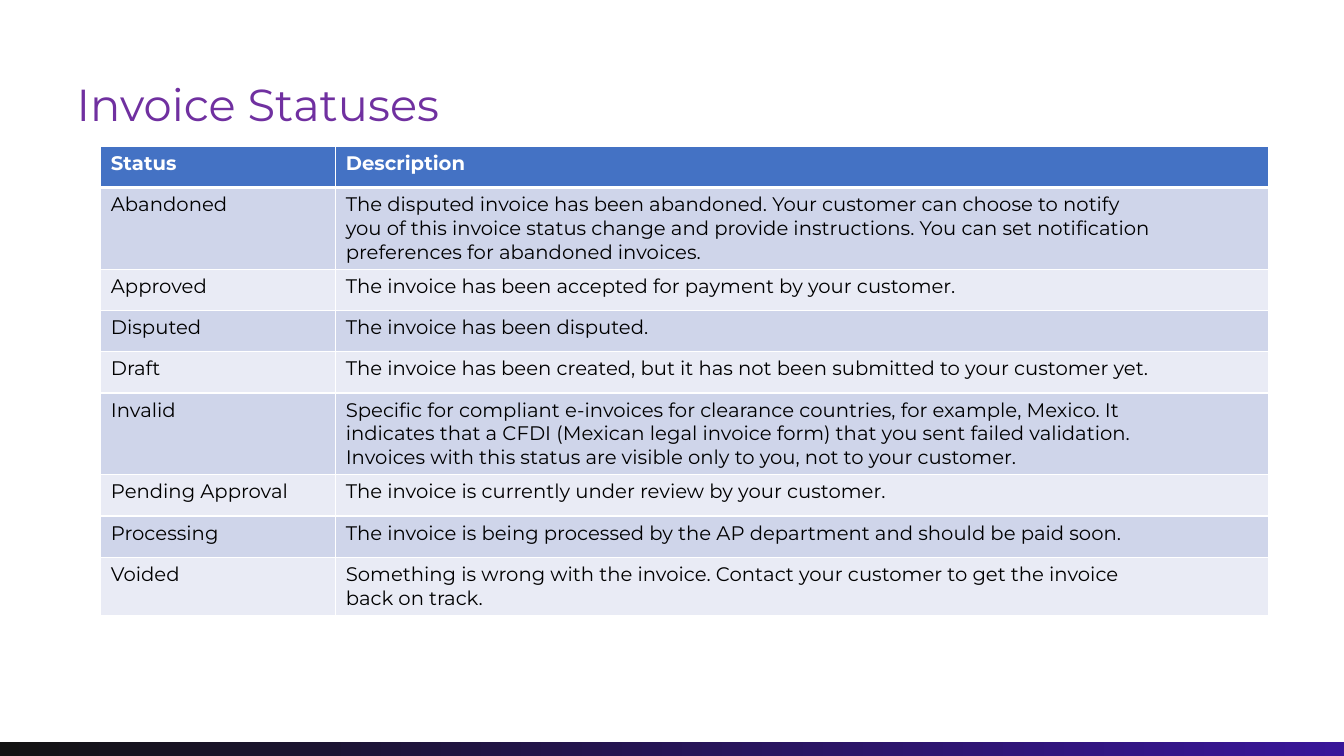
from lxml import etree
from pptx import Presentation
from pptx.dml.color import RGBColor
from pptx.enum import shapes, text
from pptx.oxml import ns
from pptx.util import Inches, Pt

WHITE = RGBColor(0xFF, 0xFF, 0xFF)
BLACK = RGBColor(0x00, 0x00, 0x00)
PURPLE = RGBColor(0x70, 0x30, 0xA0)
HEADER_BLUE = RGBColor(0x44, 0x72, 0xC4)
BAND_DARK = RGBColor(0xCF, 0xD5, 0xEA)
BAND_LIGHT = RGBColor(0xE9, 0xEB, 0xF5)
BAR_START = RGBColor(0x13, 0x13, 0x13)
BAR_END = RGBColor(0x39, 0x16, 0x99)

STATUSES = [
    ("Status", "Description"),
    ("Abandoned",
     "The disputed invoice has been abandoned. Your customer can choose to notify\n"
     "you of this invoice status change and provide instructions. You can set notification\n"
     "preferences for abandoned invoices."),
    ("Approved", "The invoice has been accepted for payment by your customer."),
    ("Disputed", "The invoice has been disputed."),
    ("Draft", "The invoice has been created, but it has not been submitted to your customer yet."),
    ("Invalid",
     "Specific for compliant e-invoices for clearance countries, for example, Mexico. It\n"
     "indicates that a CFDI (Mexican legal invoice form) that you sent failed validation.\n"
     "Invoices with this status are visible only to you, not to your customer."),
    ("Pending Approval", "The invoice is currently under review by your customer."),
    ("Processing", "The invoice is being processed by the AP department and should be paid soon."),
    ("Voided",
     "Something is wrong with the invoice. Contact your customer to get the invoice\n"
     "back on track."),
]


class SlideBuilder:
    font_name = "Montserrat"

    def __init__(self, deck):
        self.page = deck.slides.add_slide(deck.slide_layouts[5])

    def style_text(self, frame, size, color, bold=False):
        for paragraph in frame.paragraphs:
            paragraph.alignment = text.PP_ALIGN.LEFT
            font = paragraph.font
            font.name = self.font_name
            font.size = Pt(size)
            font.bold = bold
            font.color.rgb = color

    def gradient_bar(self, left, top, width, height, colors):
        bar = self.page.shapes.add_shape(
            shapes.MSO_SHAPE.RECTANGLE,
            Inches(left), Inches(top), Inches(width), Inches(height))
        bar.shadow.inherit = False
        bar.line.fill.background()
        bar.fill.gradient()
        bar.fill.gradient_angle = 0
        for stop, color in zip(bar.fill.gradient_stops, colors):
            stop.color.rgb = color

    def title(self, wording, left, top, width, height):
        title = self.page.shapes.title
        title.left, title.top = Inches(left), Inches(top)
        title.width, title.height = Inches(width), Inches(height)
        frame = title.text_frame
        frame.text = wording
        frame.auto_size = text.MSO_AUTO_SIZE.NONE
        frame.vertical_anchor = text.MSO_ANCHOR.TOP
        frame.margin_left = frame.margin_right = 0
        frame.margin_top = frame.margin_bottom = 0
        self.style_text(frame, 32, PURPLE)

    def borders(self, cell, widths):
        properties = cell._tc.get_or_add_tcPr()
        for index, (side, width) in enumerate(widths.items()):
            line = etree.Element(ns.qn(f"a:ln{side}"), w=str(Pt(width)))
            fill = etree.SubElement(line, ns.qn("a:solidFill"))
            etree.SubElement(fill, ns.qn("a:srgbClr"), val=str(WHITE))
            properties.insert(index, line)

    def table(self, rows, left, top, column_widths, row_height):
        table = self.page.shapes.add_table(
            len(rows), len(column_widths), Inches(left), Inches(top),
            Inches(sum(column_widths)), Inches(row_height * len(rows))).table
        for column, width in zip(table.columns, column_widths):
            column.width = Inches(width)
        for row_index, wordings in enumerate(rows):
            table.rows[row_index].height = Inches(row_height)
            header = row_index == 0
            band = BAND_DARK if row_index % 2 else BAND_LIGHT
            for column_index, wording in enumerate(wordings):
                cell = table.cell(row_index, column_index)
                cell.text = wording
                cell.fill.solid()
                cell.fill.fore_color.rgb = HEADER_BLUE if header else band
                self.style_text(cell.text_frame, 14, WHITE if header else BLACK, header)
                self.borders(cell, {"L": 1, "R": 1,
                                    "T": 3 if row_index == 1 else 1,
                                    "B": 3 if header else 1})


def main():
    deck = Presentation()
    deck.slide_width, deck.slide_height = Inches(13.33), Inches(7.5)
    builder = SlideBuilder(deck)
    builder.gradient_bar(-0.01, 7.36, 13.35, 0.17, (BAR_START, BAR_END))
    builder.title("Invoice Statuses", 0.76, 0.76, 12.13, 0.91)
    builder.table(STATUSES, 1, 1.45, (2.33, 9.25), 0.41)
    deck.save("out.pptx")


if __name__ == "__main__":
    main()
